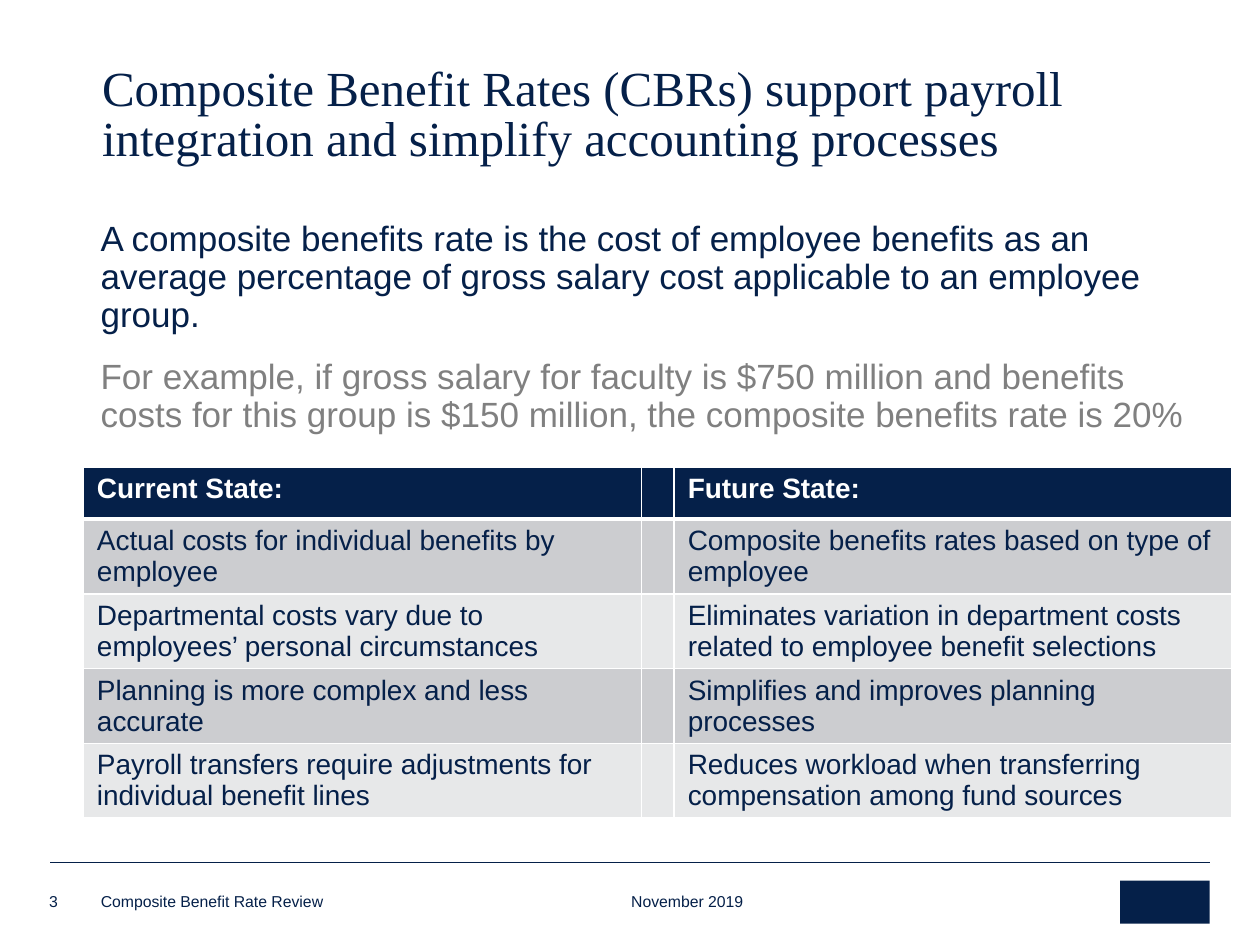
from pptx import Presentation
from pptx.dml.color import RGBColor
from pptx.enum.shapes import MSO_CONNECTOR, MSO_SHAPE
from pptx.enum.text import MSO_ANCHOR, MSO_AUTO_SIZE, PP_ALIGN
from pptx.oxml.ns import qn
from pptx.util import Inches, Pt
from lxml import etree

NAVY = RGBColor(0x05, 0x20, 0x49)
GRAY = RGBColor(0x80, 0x80, 0x80)
WHITE = RGBColor(0xFF, 0xFF, 0xFF)
DARK_BAND = RGBColor(0xCC, 0xCD, 0xD0)
LIGHT_BAND = RGBColor(0xE7, 0xE8, 0xE9)
SANS = "Arial"
SERIF = "Times New Roman"
STRAIGHT = MSO_CONNECTOR.STRAIGHT
RECTANGLE = MSO_SHAPE.RECTANGLE
TOP = MSO_ANCHOR.TOP
BOTTOM = MSO_ANCHOR.BOTTOM
LEFT = PP_ALIGN.LEFT
GROW = MSO_AUTO_SIZE.SHAPE_TO_FIT_TEXT

TITLE = ("Composite Benefit Rates (CBRs) support payroll integration "
         "and simplify accounting processes")
DEFINITION = ("A composite benefits rate is the cost of employee benefits as an "
              "average percentage of gross salary cost applicable to an employee group.")
EXAMPLE = ("For example, if gross salary for faculty is $750 million and benefits "
           "costs for this group is $150 million, the composite benefits rate is 20%")
STATES = [
    ("Current State:", "Future State:"),
    ("Actual costs for individual benefits by employee",
     "Composite benefits rates based on type of employee"),
    ("Departmental costs vary due to employees’ personal circumstances",
     "Eliminates variation in department costs related to employee benefit selections"),
    ("Planning is more complex and less accurate",
     "Simplifies and improves planning processes"),
    ("Payroll transfers require adjustments for individual benefit lines",
     "Reduces workload when transferring compensation among fund sources"),
]
COLUMN_WIDTHS = (4.43, 0.25, 4.43)
ROW_HEIGHT = 0.41


def style_text(paragraph, size, color, font=SANS, bold=False):
    for run in paragraph.runs:
        run.font.size = Pt(size)
        run.font.name = font
        run.font.bold = bold
        run.font.color.rgb = color


def set_title(slide):
    title = slide.shapes.title
    title.left, title.top = Inches(0.71), Inches(0.48)
    title.width, title.height = Inches(8.85), Inches(0.62)
    frame = title.text_frame
    frame.text = TITLE
    frame.word_wrap = True
    frame.auto_size = GROW
    frame.vertical_anchor = TOP
    heading = frame.paragraphs[0]
    heading.alignment = LEFT
    heading.line_spacing = 0.85
    style_text(heading, 28, NAVY, SERIF)


def add_explanation(slide):
    box = slide.shapes.add_textbox(Inches(0.7), Inches(1.71), Inches(8.84), Inches(0.34))
    frame = box.text_frame
    frame.word_wrap = True
    frame.text = DEFINITION
    frame.add_paragraph().text = EXAMPLE
    for paragraph, color in zip(frame.paragraphs, (NAVY, GRAY)):
        paragraph.line_spacing = 0.9
        paragraph.space_before = Pt(14)
        style_text(paragraph, 20, color)


def set_borders(cell, top, bottom):
    properties = cell._tc.get_or_add_tcPr()
    for side, width in (("L", 1), ("R", 1), ("T", top), ("B", bottom)):
        border = etree.SubElement(properties, qn(f"a:ln{side}"), w=str(Pt(width)))
        fill = etree.SubElement(border, qn("a:solidFill"))
        etree.SubElement(fill, qn("a:srgbClr"), val=str(WHITE))


def fill_cell(cell, text, row):
    set_borders(cell, 3 if row == 1 else 1, 3 if row == 0 else 1)
    cell.fill.solid()
    if row == 0:
        cell.fill.fore_color.rgb = NAVY
    else:
        cell.fill.fore_color.rgb = DARK_BAND if row % 2 else LIGHT_BAND
    cell.margin_left = cell.margin_right = Inches(0.11)
    cell.margin_top = Inches(0.05)
    cell.margin_bottom = Inches(0.01)
    if text:
        cell.text_frame.text = text
        style_text(cell.text_frame.paragraphs[0], 16,
                   NAVY if row else WHITE, bold=row == 0)


def add_state_table(slide):
    table = slide.shapes.add_table(
        len(STATES), len(COLUMN_WIDTHS), Inches(0.66), Inches(3.71),
        Inches(sum(COLUMN_WIDTHS)), Inches(ROW_HEIGHT * len(STATES))).table
    for column, width in zip(table.columns, COLUMN_WIDTHS):
        column.width = Inches(width)
    for row, (current, future) in enumerate(STATES):
        table.rows[row].height = Inches(ROW_HEIGHT)
        for column, text in enumerate((current, "", future)):
            fill_cell(table.cell(row, column), text, row)


def add_footer_text(slide, text, left, top, width, height):
    box = slide.shapes.add_textbox(Inches(left), Inches(top), Inches(width), Inches(height))
    frame = box.text_frame
    frame.word_wrap = True
    frame.vertical_anchor = BOTTOM
    frame.margin_left = frame.margin_right = 0
    frame.margin_top = frame.margin_bottom = 0
    frame.text = text
    style_text(frame.paragraphs[0], 9, NAVY)
    return frame.paragraphs[0]


def add_tab_stop(paragraph, position):
    stops = etree.SubElement(paragraph._p.get_or_add_pPr(), qn("a:tabLst"))
    etree.SubElement(stops, qn("a:tab"), pos=str(Inches(position)), algn="l")


def add_footer_rule(slide):
    rule = slide.shapes.add_connector(
        STRAIGHT, Inches(0.4), Inches(6.84), Inches(9.6), Inches(6.84))
    rule.line.color.rgb = NAVY
    rule.line.width = Pt(0.25)
    etree.SubElement(rule._element.spPr, qn("a:effectLst"))


def add_emblem(slide):
    emblem = slide.shapes.add_shape(
        RECTANGLE, Inches(8.89), Inches(6.99), Inches(0.71), Inches(0.34))
    emblem.shadow.inherit = False
    emblem.fill.solid()
    emblem.fill.fore_color.rgb = NAVY
    emblem.line.fill.background()


def main():
    presentation = Presentation()
    presentation.slide_width = Inches(10)
    presentation.slide_height = Inches(7.5)
    slide = presentation.slides.add_slide(presentation.slide_layouts[5])
    add_footer_rule(slide)
    add_emblem(slide)
    set_title(slide)
    add_state_table(slide)
    add_explanation(slide)
    add_footer_text(slide, "3", 0.39, 7.06, 0.27, 0.17)
    review = add_footer_text(
        slide, "Composite Benefit Rate Review\tNovember 2019", 0.8, 7.08, 7.74, 0.15)
    add_tab_stop(review, 4.21)
    presentation.save("out.pptx")


if __name__ == "__main__":
    main()
